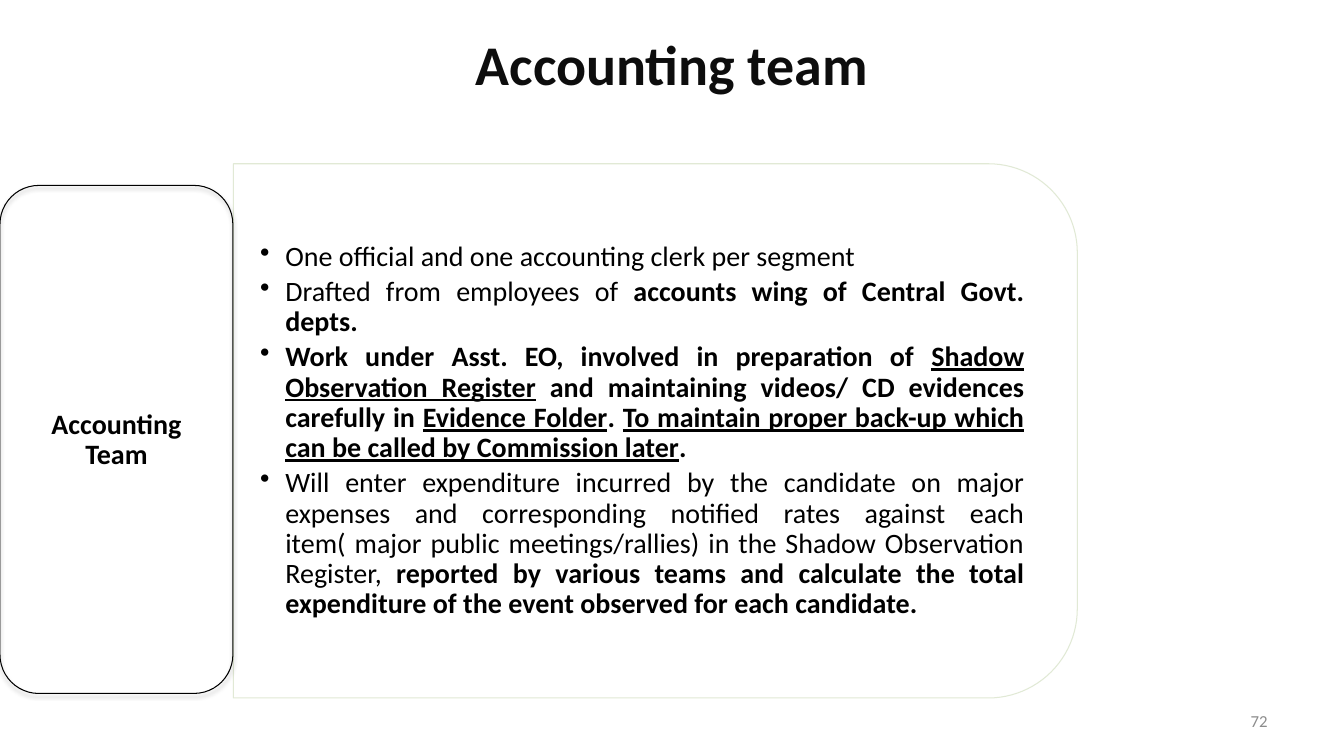
from dataclasses import dataclass

from lxml import etree
from pptx import Presentation, util as u
from pptx.dml.color import RGBColor
from pptx.enum import shapes, text
from pptx.oxml.ns import qn


@dataclass(frozen=True)
class Theme:
    font: str = "Calibri"
    paper: str = "FFFFFF"
    ink: str = "000000"
    heading: str = "0D0D0D"
    muted: str = "8C8C8C"
    panel_edge: str = "DEE7D1"
    title_size: int = 40
    body_size: int = 20
    number_size: int = 12


class Slide:
    def __init__(self, deck, theme):
        self.deck, self.theme = deck, theme
        self.page = deck.slides.add_slide(deck.slide_layouts[6])

    def place(self, left, top, width, height):
        across, down = self.deck.slide_width / 100, self.deck.slide_height / 100
        return [u.Emu(round(size)) for size in
                (left * across, top * down, width * across, height * down)]

    def outline(self, kind, area, color, rotation=0):
        shape = self.page.shapes.add_shape(kind, *self.place(*area))
        shape.rotation = rotation
        shape.shadow.inherit = False
        shape.fill.background()
        shape.line.color.rgb = RGBColor.from_string(color)
        shape.line.width = u.Pt(0.75)
        return shape

    def fade_line(self, shape, percent):
        color = shape._element.spPr.find(f"{qn('a:ln')}//{qn('a:srgbClr')}")
        etree.SubElement(color, qn("a:alpha"), val=str(percent * 1000))

    def cast_shadow(self, shape, percent, blur, distance):
        effects = shape._element.spPr.find(qn("a:effectLst"))
        shadow = etree.SubElement(
            effects, qn("a:outerShdw"), blurRad=str(u.Pt(blur)),
            dist=str(u.Pt(distance)), dir="5400000", rotWithShape="0")
        color = etree.SubElement(shadow, qn("a:srgbClr"), val=self.theme.ink)
        etree.SubElement(color, qn("a:alpha"), val=str(percent * 1000))

    def text_box(self, area, paragraphs, size, color, align, bold=None,
                 insets=(0.1, 0.05), spacing=None, after=0, bullets=False, fill=None):
        box = self.page.shapes.add_textbox(*self.place(*area))
        if fill:
            box.fill.solid()
            box.fill.fore_color.rgb = RGBColor.from_string(fill)
        frame = box.text_frame
        frame.word_wrap = True
        frame.vertical_anchor = text.MSO_ANCHOR.MIDDLE
        frame.margin_left = frame.margin_right = u.Inches(insets[0])
        frame.margin_top = frame.margin_bottom = u.Inches(insets[1])
        for index, spans in enumerate(paragraphs):
            para = frame.add_paragraph() if index else frame.paragraphs[0]
            para.alignment = align
            para.line_spacing = spacing
            para.space_after = u.Pt(after)
            if bullets:
                self.bullet(para)
            para.font.name = self.theme.font
            para.font.size = u.Pt(size)
            para.font.color.rgb = RGBColor.from_string(color)
            para.font.bold = bold
            for words, style in spans:
                span = para.add_run()
                span.text = words
                if "b" in style:
                    span.font.bold = True
                if "u" in style:
                    span.font.underline = True

    def bullet(self, para):
        properties = para._p.get_or_add_pPr()
        indent = u.Inches(0.25)
        properties.set("marL", str(indent))
        properties.set("indent", str(-indent))
        etree.SubElement(properties, qn("a:buChar"), char="•")


DUTIES = [
    [("One official and one accounting clerk per segment", "")],
    [("Drafted from employees of ", ""),
     ("accounts wing of Central Govt. depts. ", "b")],
    [("Work under Asst. EO, involved in preparation of ", "b"),
     ("Shadow Observation Register", "bu"),
     (" and maintaining videos/ CD evidences carefully in ", "b"),
     ("Evidence Folder", "bu"),
     (". ", "b"),
     ("To maintain proper back-up which can be called by Commission later", "bu"),
     (".", "b")],
    [("Will enter expenditure incurred by the candidate on major expenses and "
      "corresponding notified rates against each item( major public "
      "meetings/rallies) in the Shadow Observation Register, ", ""),
     ("reported by various teams and calculate the total expenditure of the "
      "event observed for each candidate.", "b")],
]


def main():
    deck = Presentation()
    deck.slide_width, deck.slide_height = u.Inches(13.33), u.Inches(7.5)
    theme = Theme()
    slide = Slide(deck, theme)
    kinds, align = shapes.MSO_SHAPE, text.PP_ALIGN

    slide.text_box((0, 2, 100, 12.67), [[("Accounting team", "")]],
                   theme.title_size, theme.heading, align.CENTER,
                   bold=True, fill=theme.paper)

    panel = slide.outline(kinds.ROUND_2_SAME_RECTANGLE, (28.88, 1.2, 39.76, 111.6),
                          theme.panel_edge, rotation=90)
    slide.fade_line(panel, 90)
    slide.text_box((17.33, 25.07, 60.92, 63.87), DUTIES, theme.body_size, theme.ink,
                   align.JUSTIFY, insets=(0.27, 0.14), spacing=0.9, after=3.6,
                   bullets=True)

    label = slide.outline(kinds.ROUNDED_RECTANGLE, (0, 24.53, 17.33, 67.2), theme.ink)
    slide.cast_shadow(label, 35, 3.1, 1.8)
    slide.text_box((0.83, 26.13, 15.68, 64.27), [[("Accounting Team", "")]],
                   theme.body_size, theme.ink, align.CENTER, bold=True,
                   insets=(0.08, 0.04), spacing=0.9, after=8.4)

    slide.text_box((71.72, 92.67, 23.33, 5.33), [[("72", "")]],
                   theme.number_size, theme.muted, align.RIGHT)

    deck.save("out.pptx")


if __name__ == "__main__":
    main()
